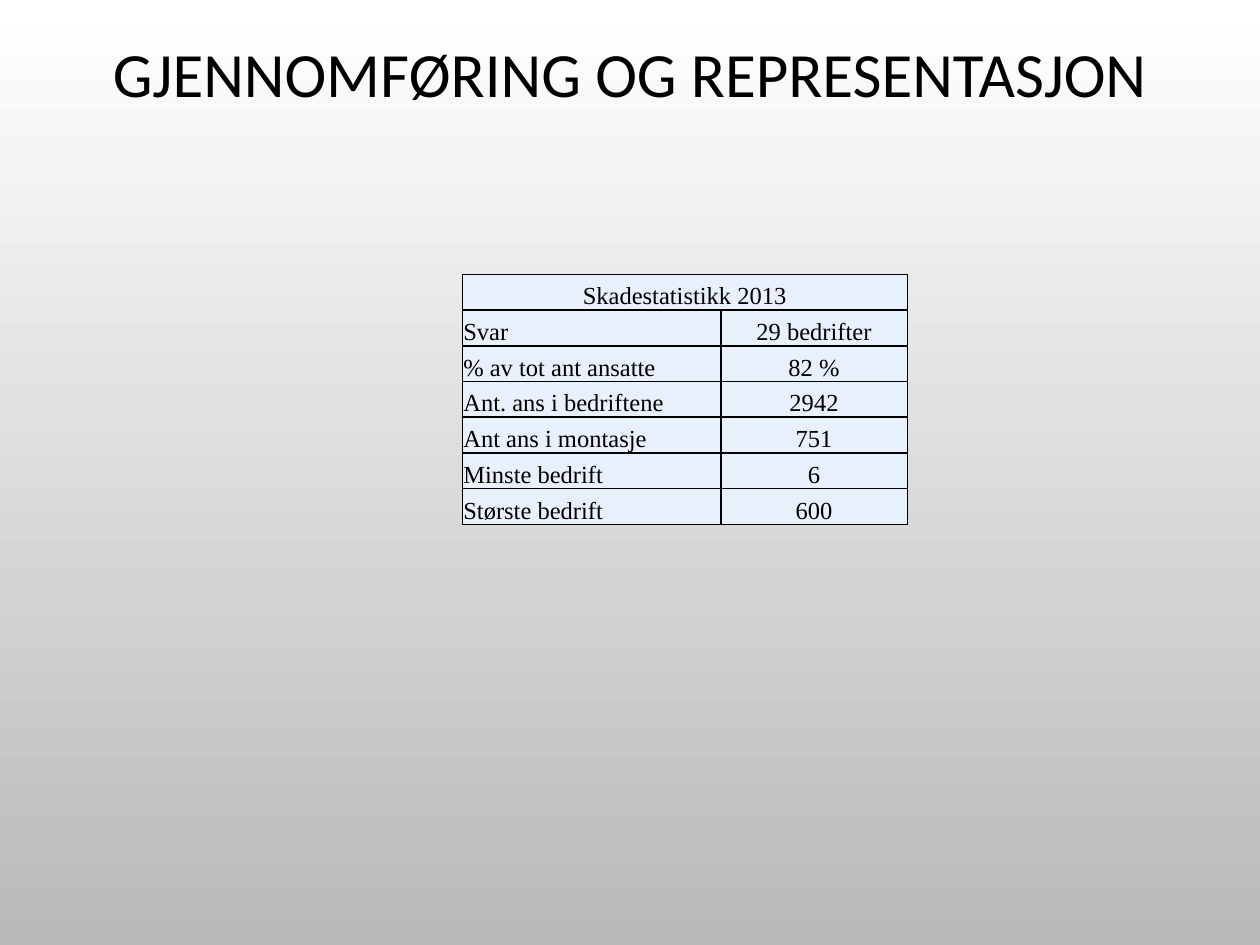
from lxml import etree
from pptx import Presentation
from pptx.dml.color import RGBColor
from pptx.enum.text import MSO_ANCHOR, PP_ALIGN
from pptx.oxml.ns import qn
from pptx.util import Cm, Pt

LEFT, CENTER = PP_ALIGN.LEFT, PP_ALIGN.CENTER
MIDDLE, BOTTOM = MSO_ANCHOR.MIDDLE, MSO_ANCHOR.BOTTOM
BLANK_LAYOUT = 6

COLORS = {"top": "FFFFFF", "bottom": "B9B9B9", "cell": "E8F0FC", "ink": "000000"}
TITLE_FONT = {"name": "Calibri", "size": Pt(36)}
TABLE_FONT = {"name": "Times New Roman", "size": Pt(14), "bold": False}
CELL_FORMAT = {
    "vertical_anchor": BOTTOM,
    "margin_left": Cm(0.02),
    "margin_right": Cm(0.02),
    "margin_top": Cm(0.02),
    "margin_bottom": Cm(0),
}
HEADING = "Skadestatistikk 2013"
STATISTICS = [
    ("Svar", "29 bedrifter"),
    ("% av tot ant ansatte", "82 %"),
    ("Ant. ans i bedriftene", "2942"),
    ("Ant ans i montasje", "751"),
    ("Minste bedrift", "6"),
    ("Største bedrift", "600"),
]
COLUMN_WIDTHS = [Cm(5.21), Cm(3.76)]
ROW_HEIGHT = Cm(0.72)


def write(paragraph, text, font, align):
    paragraph.alignment = align
    run = paragraph.add_run()
    run.text = text
    for key, value in font.items():
        setattr(run.font, key, value)
    run.font.color.rgb = RGBColor.from_string(COLORS["ink"])


def add_borders(cell):
    properties = cell._tc.get_or_add_tcPr()
    for side in ("a:lnL", "a:lnR", "a:lnT", "a:lnB"):
        line = etree.SubElement(properties, qn(side), w=str(Pt(1)))
        fill = etree.SubElement(line, qn("a:solidFill"))
        etree.SubElement(fill, qn("a:srgbClr"), val=COLORS["ink"])


presentation = Presentation()
presentation.slide_width = Cm(25.4)
presentation.slide_height = Cm(19.05)
slide = presentation.slides.add_slide(presentation.slide_layouts[BLANK_LAYOUT])

# Background, fading downwards
backdrop = slide.background.fill
backdrop.gradient()
backdrop.gradient_angle = 270
for stop, name in zip(backdrop.gradient_stops, ("top", "bottom")):
    stop.color.rgb = RGBColor.from_string(COLORS[name])

# Title
title = slide.shapes.add_textbox(Cm(1.27), Cm(0), Cm(22.86), Cm(3.12)).text_frame
title.word_wrap = True
title.vertical_anchor = MIDDLE
title.paragraphs[0].line_spacing = 0.9
write(title.paragraphs[0], "GJENNOMFØRING OG REPRESENTASJON", TITLE_FONT, CENTER)

# Table grid
row_count = len(STATISTICS) + 1
statistics = slide.shapes.add_table(
    row_count, len(COLUMN_WIDTHS), Cm(9.32), Cm(5.53),
    sum(COLUMN_WIDTHS), ROW_HEIGHT * row_count,
).table
for column, width in zip(statistics.columns, COLUMN_WIDTHS):
    column.width = width
for row in statistics.rows:
    row.height = ROW_HEIGHT

# Cell format
for cell in statistics.iter_cells():
    add_borders(cell)
    cell.fill.solid()
    cell.fill.fore_color.rgb = RGBColor.from_string(COLORS["cell"])
    for key, value in CELL_FORMAT.items():
        setattr(cell, key, value)

# Table content
heading = statistics.cell(0, 0)
heading.merge(statistics.cell(0, 1))
write(heading.text_frame.paragraphs[0], HEADING, TABLE_FONT, CENTER)
for row_index, entry in enumerate(STATISTICS, start=1):
    for column_index, (text, align) in enumerate(zip(entry, (LEFT, CENTER))):
        paragraph = statistics.cell(row_index, column_index).text_frame.paragraphs[0]
        write(paragraph, text, TABLE_FONT, align)

presentation.save("out.pptx")
